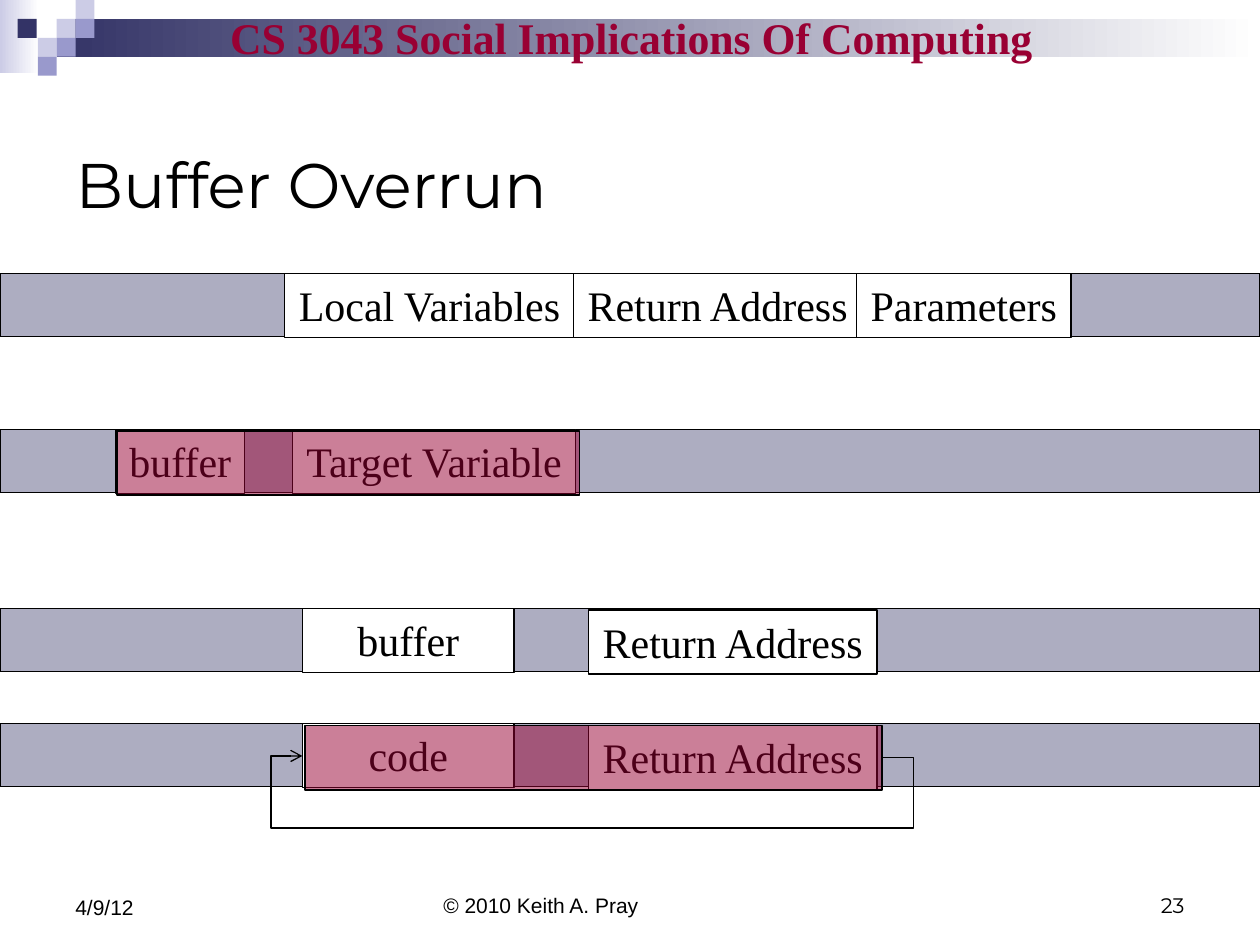
from dataclasses import dataclass
from typing import Optional

from lxml.etree import SubElement
from pptx import Presentation
from pptx.dml.color import RGBColor
from pptx.enum.shapes import MSO_CONNECTOR, MSO_SHAPE
from pptx.enum.text import MSO_ANCHOR as Anchor, MSO_AUTO_SIZE as AutoSize, PP_ALIGN as Align
from pptx.oxml.ns import qn
from pptx.util import Inches, Pt

BLACK = RGBColor(0x00, 0x00, 0x00)
WHITE = RGBColor(0xFF, 0xFF, 0xFF)
NAVY = RGBColor(0x33, 0x33, 0x66)
LILAC = RGBColor(0xCC, 0xCC, 0xE6)
VIOLET = RGBColor(0x99, 0x99, 0xCC)
CRIMSON = RGBColor(0x99, 0x00, 0x33)
SERIF, SANS, DISPLAY = "Times New Roman", "Arial", "Montserrat"

SQUARE = 0.15
BAR_H, CELL_H = 0.5, 0.51


@dataclass
class Cell:
    text: str
    left: float
    width: float
    drop: float = 0  # offset below the top of the memory bar
    wrap: bool = False


@dataclass
class Overrun:
    left: float
    width: float
    drop: float


@dataclass
class Memory:
    top: float
    cells: list[Cell]
    overrun: Optional[Overrun] = None


@dataclass
class Label:
    text: str
    left: float
    top: float
    width: float
    height: float
    font: str = SANS
    size: float = 12
    color: RGBColor = BLACK
    bold: bool = False
    align: Align = Align.LEFT
    anchor: Anchor = Anchor.BOTTOM
    wrap: bool = True


MEMORIES = [
    Memory(2.17, [Cell("Local Variables", 2.26, 2.3),
                  Cell("Return Address", 4.55, 2.29),
                  Cell("Parameters", 6.8, 1.7)]),
    Memory(3.41, [Cell("buffer", 0.92, 1.02),
                  Cell("Target Variable", 2.32, 2.25)],
           Overrun(0.93, 3.67, 0.01)),
    Memory(4.83, [Cell("buffer", 2.4, 1.68, wrap=True),
                  Cell("Return Address", 4.67, 2.29, 0.01)]),
    Memory(5.74, [Cell("code", 2.4, 1.68, wrap=True),
                  Cell("Return Address", 4.67, 2.29, 0.02)],
           Overrun(2.42, 4.58, 0.02)),
]

# Header squares: left, top, colour
SQUARES = [
    (0.45, 0.15, LILAC), (0.6, 0, LILAC), (0.6, 0.15, VIOLET), (0.3, 0.3, LILAC),
    (0.14, 0.15, NAVY), (0.45, 0.3, VIOLET), (0.3, 0.45, VIOLET),
]

LABELS = [
    Label("CS 3043 Social Implications Of Computing", 1.72, 0.03, 6.58, 0.52, SERIF, 25,
          CRIMSON, True, Align.CENTER, Anchor.MIDDLE, wrap=False),
    Label("© 2010 Keith A. Pray", 3.42, 6.83, 3.17, 0.5),
    Label("23", 7.17, 6.83, 2.33, 0.5, DISPLAY, align=Align.RIGHT),
    Label("4/9/12", 0.5, 6.83, 2.33, 0.52),
]


def add_rect(slide, left: float, top: float, width: float, height: float,
             color: RGBColor, opacity: int = 100, outlined: bool = True):
    s = slide.shapes.add_shape(MSO_SHAPE.RECTANGLE, Inches(left), Inches(top),
                               Inches(width), Inches(height))
    s.shadow.inherit = False
    s.fill.solid()
    s.fill.fore_color.rgb = color
    if opacity < 100:
        clr = s.fill._xPr.find(".//" + qn("a:srgbClr"))
        SubElement(clr, qn("a:alpha"), val=str(opacity * 1000))
    if outlined:
        s.line.color.rgb = BLACK
        s.line.width = Pt(0.75)
    else:
        s.line.fill.background()
    return s


def add_fade(slide, left: float, top: float, width: float, height: float, color: RGBColor) -> None:
    s = add_rect(slide, left, top, width, height, color, outlined=False)
    s.fill.gradient()
    s.fill.gradient_angle = 0
    for stop, rgb in zip(s.fill.gradient_stops, (color, WHITE)):
        stop.color.rgb = rgb


def set_text(s, text: str, font: str, size: float, color: RGBColor = BLACK,
             bold: bool = False, align: Align = Align.LEFT,
             anchor: Anchor = Anchor.MIDDLE, wrap: bool = True) -> None:
    tf = s.text_frame
    tf.text = text
    tf.word_wrap = wrap
    tf.vertical_anchor = anchor
    p = tf.paragraphs[0]
    p.alignment = align
    p.font.name, p.font.size, p.font.bold = font, Pt(size), bold
    p.font.color.rgb = color


def add_label(slide, label: Label) -> None:
    s = slide.shapes.add_textbox(Inches(label.left), Inches(label.top),
                                 Inches(label.width), Inches(label.height))
    set_text(s, label.text, label.font, label.size, label.color, label.bold,
             label.align, label.anchor, label.wrap)


def add_memory(slide, memory: Memory) -> None:
    add_rect(slide, 0, memory.top, 10, BAR_H, NAVY, opacity=40)
    for cell in memory.cells:
        s = add_rect(slide, cell.left, memory.top + cell.drop, cell.width, CELL_H, WHITE)
        set_text(s, cell.text, SERIF, 24, align=Align.CENTER, anchor=Anchor.TOP, wrap=cell.wrap)
        s.text_frame.auto_size = AutoSize.SHAPE_TO_FIT_TEXT
    if memory.overrun:
        o = memory.overrun
        add_rect(slide, o.left, memory.top + o.drop, o.width, CELL_H, CRIMSON, opacity=50)


def add_return_arrow(slide, begin: tuple[float, float], end: tuple[float, float],
                     margin: float, low: float) -> None:
    """Arrow that leaves to the right, passes below and comes back from the left."""
    (x1, y1), (x2, y2) = begin, end
    c = slide.shapes.add_connector(MSO_CONNECTOR.ELBOW, Inches(x1), Inches(y1),
                                   Inches(x2), Inches(y2))
    c.line.color.rgb = BLACK
    c.line.width = Pt(0.75)
    sp_pr = c._element.spPr
    SubElement(sp_pr.find(qn("a:ln")), qn("a:tailEnd"), type="arrow")
    SubElement(sp_pr, qn("a:effectLst"))

    geom = sp_pr.find(qn("a:prstGeom"))
    geom.set("prst", "bentConnector5")
    guides = geom.find(qn("a:avLst"))
    side = margin / (x1 - x2)
    for i, ratio in enumerate((-side, (low - y1) / (y2 - y1), 1 + side), 1):
        SubElement(guides, qn("a:gd"), name=f"adj{i}", fmla=f"val {round(ratio * 100000)}")


def main() -> None:
    prs = Presentation()
    prs.slide_width, prs.slide_height = Inches(10), Inches(7.5)
    slide = prs.slides.add_slide(prs.slide_layouts[5])

    # Header band
    add_fade(slide, 0, 0, 0.31, 0.58, LILAC)
    add_fade(slide, 0.45, 0.15, 9.55, 0.3, NAVY)
    for left, top, color in SQUARES:
        add_rect(slide, left, top, SQUARE, SQUARE, color, outlined=False)

    # Title
    title = slide.shapes.title
    title.left, title.top = Inches(0.5), Inches(0.83)
    title.width, title.height = Inches(9), Inches(1.25)
    set_text(title, "Buffer Overrun", DISPLAY, 36)

    # Course name and footer
    for label in LABELS:
        add_label(slide, label)

    # Memory diagrams
    for memory in MEMORIES:
        add_memory(slide, memory)
    add_return_arrow(slide, (7, 6.01), (2.4, 6), margin=0.25, low=6.58)

    prs.save("out.pptx")


if __name__ == "__main__":
    main()
